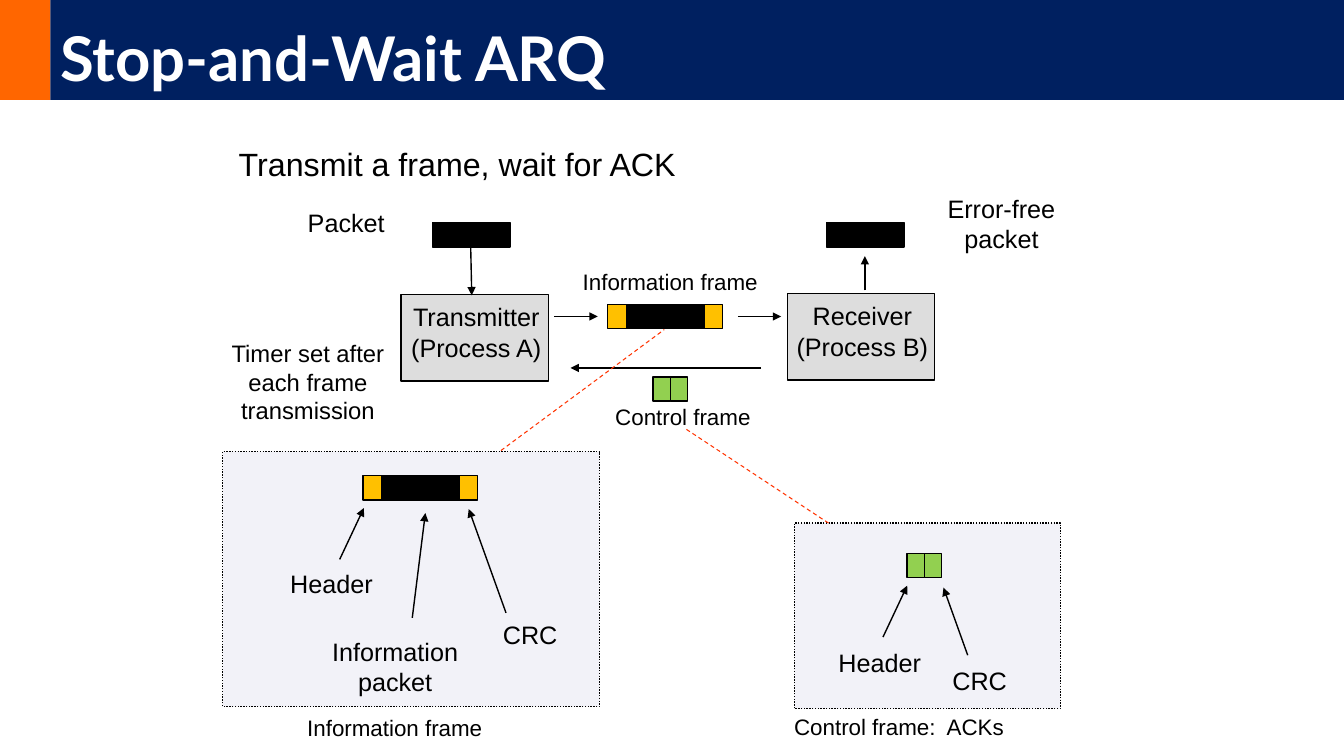
"""Build the Stop-and-Wait ARQ slide on a grid of tenth-inch cells."""
from lxml.etree import SubElement
from pptx import Presentation
from pptx.dml.color import RGBColor
from pptx.enum.dml import MSO_LINE_DASH_STYLE as Dash
from pptx.enum.shapes import MSO_CONNECTOR as Connector, MSO_SHAPE as Shape
from pptx.enum.text import MSO_ANCHOR as Anchor, PP_ALIGN as Align
from pptx.oxml.ns import qn
from pptx.util import Inches, Pt

COLUMNS, ROWS = 133.33, 75
BLACK, AMBER, GREEN, GREY, PANEL = "000000", "FFC000", "92D050", "DDDDDD", "F2F2F8"
ORANGE, NAVY, WHITE, RED = "FF6600", "002060", "FFFFFF", "FF3300"
CELL_HEIGHT, PACKET_WIDTH, FRAME_WIDTH, CONTROL_WIDTH = 2.4, 7.7, 11.4, 1.7
BODY = {"size": Pt(18), "name": "Arial", "bold": False}
CAPTION = {**BODY, "size": Pt(16)}
NOTE = {**BODY, "size": Pt(17)}
LEAD = {**BODY, "size": Pt(23)}
TITLE = {"size": Pt(44), "name": "Lato", "bold": True}


def cells(*values):
    """Turn grid cells into slide lengths."""
    return [Inches(value / 10) for value in values]


def color(value):
    """Turn a hex string into a colour."""
    return RGBColor.from_string(value)


def apply(target, values):
    """Set each attribute named in the format values."""
    for name, value in values.items():
        setattr(target, name, value)


def style_line(line, ink, width=1, dash=None):
    """Give a line its colour, width and dash."""
    line.color.rgb = color(ink)
    apply(line, {"width": Pt(width), "dash_style": dash})


def add_box(slide, left, top, width, height, fill, outline=BLACK, dash=None):
    """Draw a filled rectangle."""
    shape = slide.shapes.add_shape(Shape.RECTANGLE, *cells(left, top, width, height))
    shape.shadow.inherit = False
    shape.fill.solid()
    shape.fill.fore_color.rgb = color(fill)
    if outline:
        style_line(shape.line, outline, dash=dash)
    else:
        shape.line.fill.background()
    return shape


def write(shape, text, font, ink=BLACK, align=Align.LEFT, anchor=Anchor.TOP,
          wrap=False, spacing=1.0):
    """Fill a shape with one paragraph for each line of text."""
    frame = shape.text_frame
    apply(frame, {"text": text, "word_wrap": wrap, "vertical_anchor": anchor})
    for paragraph in frame.paragraphs:
        apply(paragraph, {"alignment": align, "line_spacing": spacing})
        apply(paragraph.font, font)
        paragraph.font.color.rgb = color(ink)


def add_label(slide, left, top, width, height, text, font=BODY, **layout):
    """Place text without a frame."""
    box = slide.shapes.add_textbox(*cells(left, top, width, height))
    write(box, text, font, **layout)


def add_line(slide, start, end, ink=BLACK, width=1, dash=None):
    """Join two grid points with a straight line."""
    connector = slide.shapes.add_connector(Connector.STRAIGHT, *cells(*start, *end))
    style_line(connector.line, ink, width, dash)
    SubElement(connector._element.spPr, qn("a:effectLst"))
    return connector


def add_arrow(slide, start, end):
    """Draw a line with an arrowhead at its end."""
    outline = add_line(slide, start, end).line._get_or_add_ln()
    SubElement(outline, qn("a:tailEnd"), type="triangle")


def add_packet(slide, left, top):
    """Draw a black packet."""
    add_box(slide, left, top, PACKET_WIDTH, CELL_HEIGHT, BLACK)


def add_information_frame(slide, left, top):
    """Draw a packet between an amber header and CRC."""
    add_box(slide, left, top, FRAME_WIDTH, CELL_HEIGHT, AMBER)
    add_packet(slide, left + (FRAME_WIDTH - PACKET_WIDTH) / 2, top)


def add_control_frame(slide, left, top):
    """Draw a green header and CRC side by side."""
    for index in range(2):
        add_box(slide, left + index * CONTROL_WIDTH, top, CONTROL_WIDTH, CELL_HEIGHT, GREEN)


def add_process(slide, left, top, text):
    """Draw a grey process box with its name."""
    add_box(slide, left, top, 14.6, 8.6, GREY)
    add_label(slide, left - 0.1, top + 0.25, 15.1, 7, text, align=Align.CENTER)


def add_heading(slide):
    """Draw the title bar and the lead sentence."""
    add_box(slide, 0, 0, 5, 9.9, ORANGE, outline=None)
    bar = add_box(slide, 5, 0, COLUMNS - 5, 9.9, NAVY, outline=None)
    write(bar, "Stop-and-Wait ARQ", TITLE, ink=WHITE, anchor=Anchor.BOTTOM,
          wrap=True, spacing=0.9)
    add_label(slide, 22.7, 13.8, 45.6, 4.8, "Transmit a frame, wait for ACK", LEAD,
              anchor=Anchor.BOTTOM)


def add_exchange(slide):
    """Draw the processes and the frames sent between them."""
    add_process(slide, 39.8, 29.2, "Transmitter\n(Process A)")
    add_process(slide, 78.1, 29.1, "Receiver\n(Process B)")
    for left in (42.9, 82):
        add_packet(slide, left, 22.1)
    add_information_frame(slide, 60.3, 30.2)
    add_control_frame(slide, 64.8, 37.4)
    for start, end in (((46.7, 24.6), (46.8, 29.3)), ((55, 31.4), (59.3, 31.4)),
                       ((73.2, 31.4), (77.5, 31.4)), ((75.5, 36.5), (56.6, 36.5)),
                       ((85.8, 28.8), (85.8, 25.4))):
        add_arrow(slide, start, end)
    add_label(slide, 29.5, 20.1, 9.7, 4, "Packet", align=Align.CENTER)
    add_label(slide, 90.2, 18.7, 18.3, 7, "Error-free\npacket", align=Align.CENTER)
    add_label(slide, 54.8, 26.1, 23.4, 3.6, "Information frame", CAPTION, align=Align.CENTER)
    add_label(slide, 57.2, 39.5, 21.1, 3.6, "Control frame", CAPTION, align=Align.CENTER)
    add_label(slide, 20.1, 33, 20.9, 9.6, "Timer set after each frame transmission", NOTE,
              align=Align.CENTER, anchor=Anchor.BOTTOM, wrap=True)


def add_information_detail(slide):
    """Draw the enlarged information frame."""
    add_box(slide, 22.1, 44.8, 37.4, 25.3, PANEL, dash=Dash.ROUND_DOT)
    add_information_frame(slide, 36, 47.2)
    for start, end in (((33.7, 55.5), (36.1, 50.4)), ((40.9, 61.3), (42.2, 50.9)),
                       ((50.2, 60.8), (46.5, 50.5))):
        add_arrow(slide, start, end)
    add_label(slide, 27.8, 55.9, 10.3, 4, "Header")
    add_label(slide, 31.9, 62.6, 14.6, 7, "Information\npacket", align=Align.CENTER)
    add_label(slide, 48.9, 60.9, 7.5, 4, "CRC")
    add_label(slide, 29.5, 70.4, 19.6, 3.7, "Information frame", CAPTION)


def add_control_detail(slide):
    """Draw the enlarged control frame."""
    add_box(slide, 78.8, 51.9, 26.4, 18.4, PANEL, dash=Dash.ROUND_DOT)
    add_control_frame(slide, 90, 54.9)
    for start, end in (((87.6, 63.2), (90, 58.1)), ((96, 65), (93.6, 58.3))):
        add_arrow(slide, start, end)
    add_label(slide, 82.2, 63.7, 10.3, 4, "Header")
    add_label(slide, 93.5, 65.5, 7.7, 4, "CRC", wrap=True)
    add_label(slide, 77.8, 70.3, 23, 3.6, "Control frame:  ACKs", CAPTION, wrap=True)


def main():
    """Build and save the slide."""
    presentation = Presentation()
    width, height = cells(COLUMNS, ROWS)
    apply(presentation, {"slide_width": width, "slide_height": height})
    slide = presentation.slides.add_slide(presentation.slide_layouts[6])
    add_heading(slide)
    add_information_detail(slide)
    add_control_detail(slide)
    add_exchange(slide)
    for start, end in (((49.7, 44.7), (65.9, 32.7)), ((68.1, 42.6), (82.2, 51.9))):
        add_line(slide, start, end, RED, 0.75, Dash.DASH)
    presentation.save("out.pptx")


if __name__ == "__main__":
    main()
